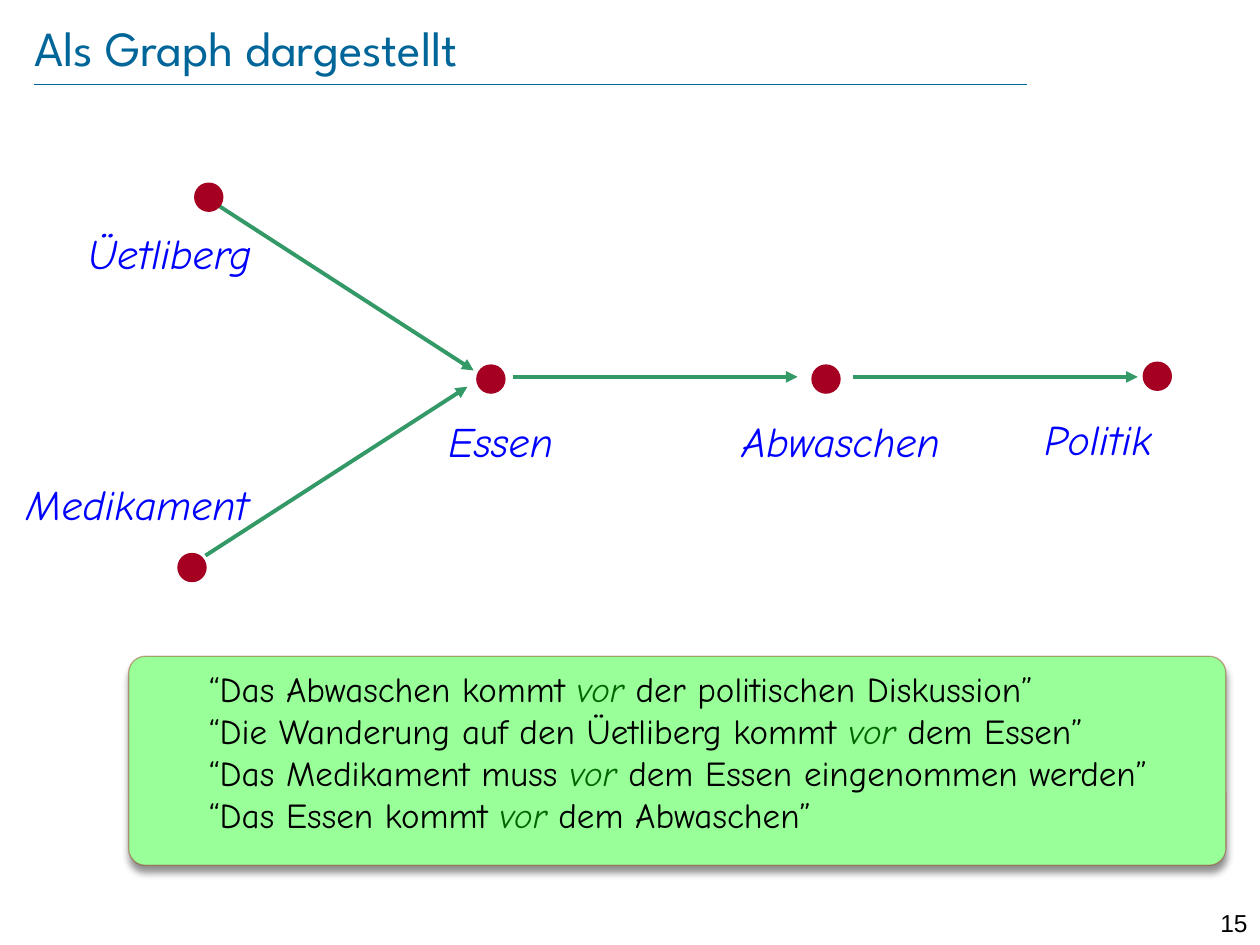
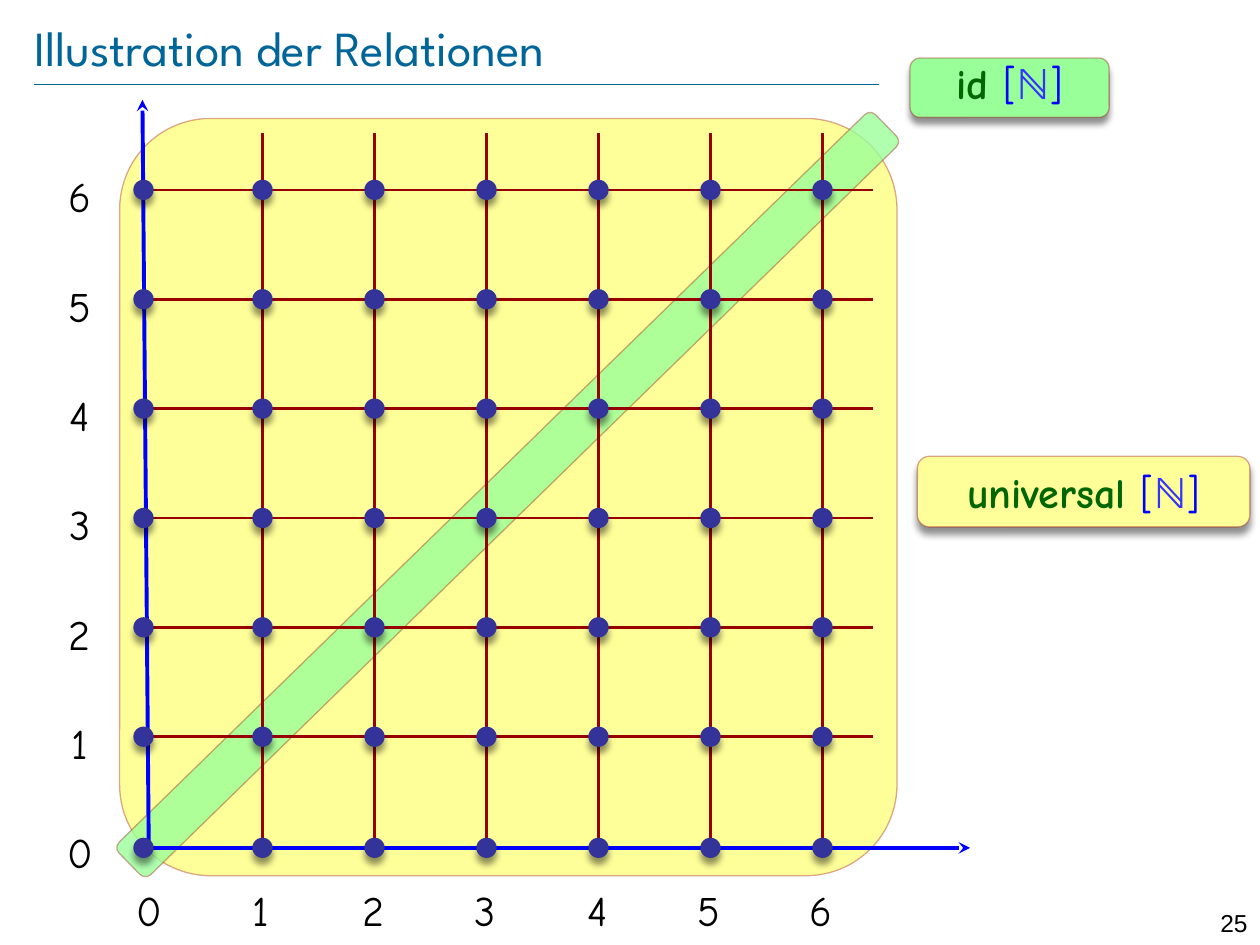
from pptx import Presentation
from pptx.dml.color import RGBColor
from pptx.enum import shapes, text
from pptx.oxml import parse_xml
from pptx.oxml.ns import nsdecls, qn
from pptx.util import Pt

TEAL, BLUE, NUMBER_BLUE, NAVY = "006699", "0000FF", "3333FF", "333399"
BLACK, DARK_GREEN, ARROW_GREEN = "000000", "006600", "339966"
GREEN, YELLOW, MAROON, RED = "99FF99", "FFFF99", "990000", "A50021"
BODY_FONT, TITLE_FONT, NUMBER_FONT = "Comic Neue", "League Spartan", "Arial"

PLAIN = {"name": BODY_FONT, "size": Pt(24), "color": BLACK}
NODE_LABEL = PLAIN | {"color": BLUE, "italic": True}
STATEMENT = PLAIN | {"size": Pt(20)}
BEFORE = STATEMENT | {"color": DARK_GREEN, "italic": True}
RELATION = PLAIN | {"color": DARK_GREEN, "bold": True}
BRACKET = PLAIN | {"color": BLUE}
NUMBER_SET = PLAIN | {"color": NUMBER_BLUE}
TITLE = {"name": TITLE_FONT, "size": Pt(28), "color": TEAL}
PAGE_NUMBER = {"name": NUMBER_FONT, "size": Pt(14), "color": BLACK}

LEFT, CENTER, RIGHT = text.PP_ALIGN.LEFT, text.PP_ALIGN.CENTER, text.PP_ALIGN.RIGHT


def rgb(hex_color):
    return RGBColor.from_string(hex_color)


def add_run(paragraph, words, style):
    run = paragraph.add_run()
    run.text = words
    for attribute, value in style.items():
        if attribute == "color":
            run.font.color.rgb = rgb(value)
        else:
            setattr(run.font, attribute, value)


def make_transparent(solid_fill, percent):
    """Set the opacity of a solid fill, in percent."""
    alpha = parse_xml(f'<a:alpha {nsdecls("a")} val="{percent * 1000}"/>')
    solid_fill.find(qn("a:srgbClr")).append(alpha)


def add_shadow(shape):
    shape.element.spPr.find(qn("a:effectLst")).append(parse_xml(
        f'<a:outerShdw {nsdecls("a")} blurRad="{Pt(4)}" dist="{Pt(4)}" dir="5400000" '
        'algn="ctr" rotWithShape="0"><a:srgbClr val="000000">'
        '<a:alpha val="43000"/></a:srgbClr></a:outerShdw>'))


def add_label(slide, box, words, style, align=LEFT):
    label = slide.shapes.add_textbox(*map(Pt, box))
    label.text_frame.word_wrap = True
    paragraph = label.text_frame.paragraphs[0]
    paragraph.alignment = align
    add_run(paragraph, words, style)


def add_line(slide, start, end, color, width, head=None):
    line = slide.shapes.add_connector(
        shapes.MSO_CONNECTOR.STRAIGHT, *map(Pt, (*start, *end)))
    line.line.color.rgb = rgb(color)
    line.line.width = Pt(width)
    properties = line.element.spPr
    if head:
        properties.find(qn("a:ln")).append(
            parse_xml(f'<a:tailEnd {nsdecls("a")} type="{head}"/>'))
    properties.append(parse_xml(f'<a:effectLst {nsdecls("a")}/>'))


def add_dot(slide, center, diameter, color, shadow=False):
    x, y = (value - diameter / 2 for value in center)
    dot = slide.shapes.add_shape(
        shapes.MSO_SHAPE.OVAL, *map(Pt, (x, y, diameter, diameter)))
    dot.shadow.inherit = False
    dot.fill.solid()
    dot.fill.fore_color.rgb = rgb(color)
    dot.line.fill.background()
    if shadow:
        add_shadow(dot)


def add_panel(slide, box, color, rounding, shadow=True, opacity=None):
    """Add a rounded panel with a faint maroon outline."""
    panel = slide.shapes.add_shape(
        shapes.MSO_SHAPE.ROUNDED_RECTANGLE, *map(Pt, box))
    panel.adjustments[0] = rounding
    panel.shadow.inherit = False
    panel.fill.solid()
    panel.fill.fore_color.rgb = rgb(color)
    panel.line.color.rgb = rgb(MAROON)
    panel.line.width = Pt(0.75)
    properties = panel.element.spPr
    make_transparent(properties.find(qn("a:ln")).find(qn("a:solidFill")), 34)
    if opacity:
        make_transparent(properties.find(qn("a:solidFill")), opacity)
    if shadow:
        add_shadow(panel)
    panel.text_frame.vertical_anchor = text.MSO_ANCHOR.TOP
    return panel


def add_relation(slide, box, color, name, line_spacing=1.0):
    """Add a panel that names a relation on the natural numbers."""
    paragraph = add_panel(slide, box, color, 0.17).text_frame.paragraphs[0]
    paragraph.alignment = CENTER
    paragraph.line_spacing = line_spacing
    for words, style in ((f"{name} ", RELATION), ("[", BRACKET),
                         ("ℕ", NUMBER_SET), ("]", BRACKET)):
        add_run(paragraph, words, style)


def add_statements(slide, box, statements):
    panel = add_panel(slide, box, GREEN, 0.08)
    paragraph = panel.text_frame.paragraphs[0]
    paragraph.level = 1
    paragraph.alignment = LEFT
    properties = paragraph._p.get_or_add_pPr()
    for attribute, value in {"marL": Pt(36), "indent": 0}.items():
        properties.set(attribute, str(value))
    for index, (first, second) in enumerate(statements):
        if index:
            paragraph.add_line_break()
        add_run(paragraph, f"“{first} ", STATEMENT)
        add_run(paragraph, "vor ", BEFORE)
        add_run(paragraph, f"{second}”", STATEMENT)


def start_slide(deck, heading, page, rule_end):
    """Add a slide with its title, the rule below it and the page number."""
    slide = deck.slides.add_slide(deck.slide_layouts[5])
    add_line(slide, (19.5, 48.2), (rule_end, 48.2), TEAL, 0.25)
    add_label(slide, (680.4, 515.5, 39.6, 17.3), page, PAGE_NUMBER, RIGHT)
    title = slide.shapes.title
    for side, value in zip(("left", "top", "width", "height"),
                           (19.5, 9.4, 625.7, 34.6)):
        setattr(title, side, Pt(value))
    frame = title.text_frame
    for side in ("left", "top", "right", "bottom"):
        setattr(frame, f"margin_{side}", 0)
    frame.vertical_anchor = text.MSO_ANCHOR.MIDDLE
    frame.paragraphs[0].alignment = LEFT
    add_run(frame.paragraphs[0], heading, TITLE)
    return slide


def build_order_graph(deck):
    slide = start_slide(deck, "Als Graph dargestellt", "15", 586.8)
    add_statements(slide, (73.5, 375, 627, 119.5), (
        ("Das Abwaschen kommt", "der politischen Diskussion"),
        ("Die Wanderung auf den Üetliberg kommt", "dem Essen"),
        ("Das Medikament muss", "dem Essen eingenommen werden"),
        ("Das Essen kommt", "dem Abwaschen")))
    for start, end in (((120.2, 114.5), (270.7, 211.7)),
                       ((117.4, 317.5), (267.1, 221)),
                       ((293, 215.4), (455.8, 215.4)),
                       ((487.4, 215.4), (650.2, 215.4))):
        add_line(slide, start, end, ARROW_GREEN, 2.25, "triangle")
    activities = (
        ("Üetliberg", (119.3, 112.7), (43.2, 126.7, 125.3)),
        ("Medikament", (109.7, 324.3), (7.9, 270, 153.4)),
        ("Essen", (280.5, 216.6), (249.1, 234, 157)),
        ("Abwaschen", (472, 216.6), (416.9, 234, 150.5)),
        ("Politik", (661.3, 215), (589.7, 232.6, 95.8)))
    for activity, center, label_box in activities:
        add_label(slide, (*label_box, 36), activity, NODE_LABEL)
        add_dot(slide, center, 16.8, RED)


def build_relations(deck):
    slide = start_slide(deck, "Illustration der Relationen", "25", 502.5)
    columns = [82] + [150 + 64 * step for step in range(6)]
    rows = [484.5] + [421 - 62.5 * step for step in range(6)]

    add_panel(slide, (68.4, 67.7, 444.2, 432.7), YELLOW, 0.12, shadow=False)
    identity = add_panel(slide, (277.2, -19.4, 25.9, 604.1), GREEN, 0.17,
                         shadow=False, opacity=78)
    identity.rotation = 45.7

    add_line(slide, (85.7, rows[0]), (554.4, rows[0]), BLUE, 2.25, "stealth")
    add_line(slide, (85, 483), (81.4, 57), BLUE, 2.25, "stealth")
    for x in columns[1:]:
        add_line(slide, (x, 76.3), (x, rows[0]), MAROON, 1.5)
    for y in rows[1:]:
        add_line(slide, (85, y), (499, y), MAROON, 1.5)
    for y in rows:
        for x in columns:
            add_dot(slide, (x, y), 11.6, NAVY, shadow=True)

    for number in range(7):
        add_label(slide, (68.4 + 64 * number, 501.8, 33.8, 29),
                  str(number), PLAIN, CENTER)
        add_label(slide, (28.8, 469 - 62.5 * number, 33.8, 29),
                  str(number), PLAIN, CENTER)

    add_relation(slide, (524.2, 260.8, 190, 40.3), YELLOW, "universal")
    add_relation(slide, (520, 33.2, 113.8, 33.9), GREEN, "id", 0.8)


def main():
    deck = Presentation()
    deck.slide_width, deck.slide_height = Pt(720), Pt(540)
    build_order_graph(deck)
    build_relations(deck)
    deck.save("out.pptx")


if __name__ == "__main__":
    main()
